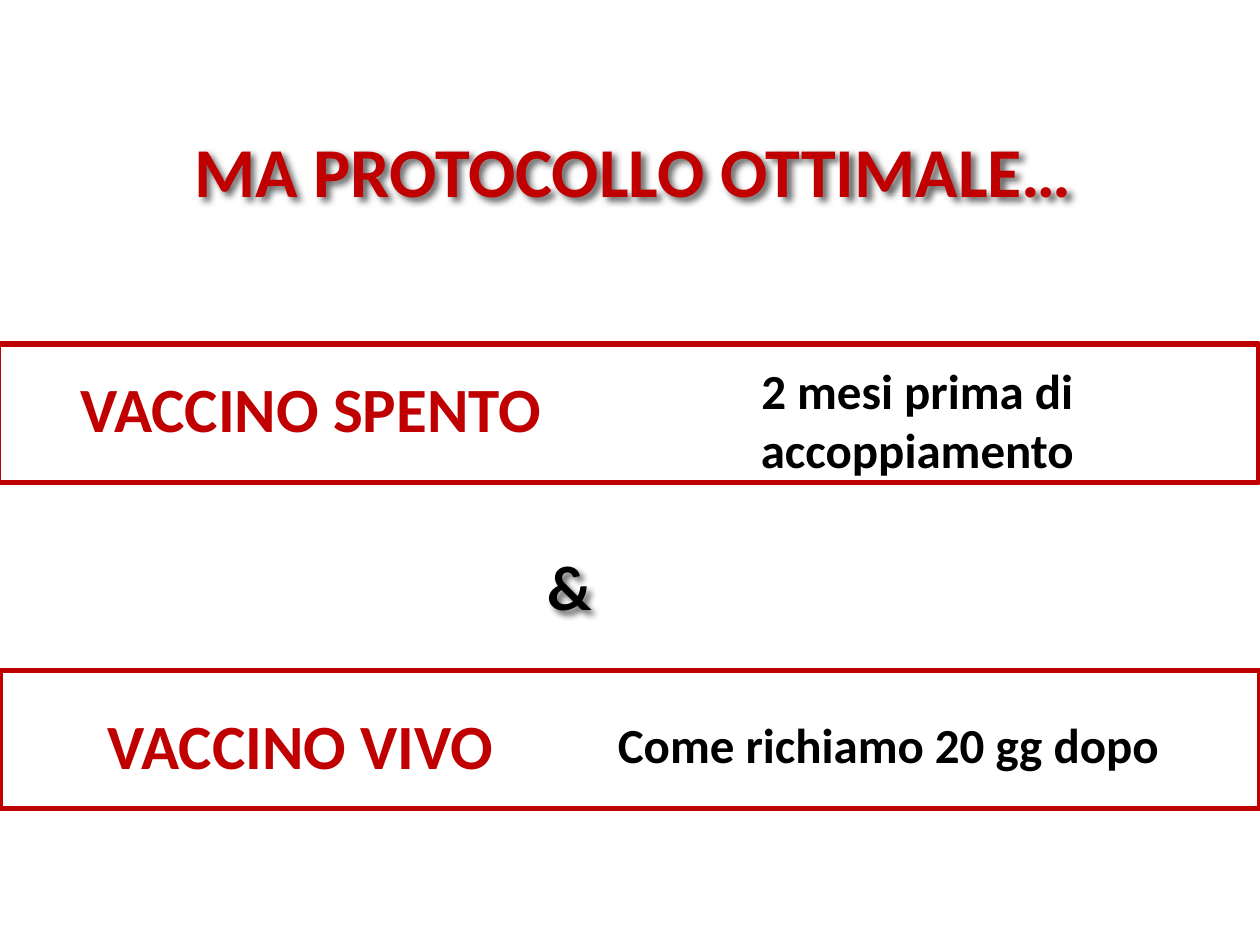
from dataclasses import dataclass

from lxml import etree
from pptx import Presentation
from pptx.dml.color import RGBColor
from pptx.enum.shapes import MSO_SHAPE
from pptx.enum.text import PP_ALIGN
from pptx.oxml import parse_xml
from pptx.util import Inches, Pt

WIDTH, HEIGHT = 10, 7.5
RED, BLACK = "C00000", "000000"
BAND_HEIGHT = 1.1
DRAWING_NS = "http://schemas.openxmlformats.org/drawingml/2006/main"


@dataclass(frozen=True)
class Area:
    left: float
    top: float
    width: float
    height: float

    def emu(self) -> tuple:
        return tuple(map(Inches, (self.left, self.top, self.width, self.height)))


@dataclass(frozen=True)
class Step:
    band_left: float
    band_top: float
    vaccine: str
    vaccine_area: Area
    timing: str
    timing_area: Area


STEPS = (
    Step(-0.01, 2.73, "VACCINO SPENTO", Area(0.52, 2.88, 3.89, 0.71),
         "2 mesi prima di accoppiamento", Area(4.76, 2.81, 5.04, 1.04)),
    Step(0, 5.32, "VACCINO VIVO", Area(0.74, 5.56, 3.29, 0.71),
         "Come richiamo 20 gg dopo", Area(4.53, 5.62, 5.04, 0.57)),
)


def color(value: str) -> RGBColor:
    return RGBColor.from_string(value)


def cast_shadow(shape) -> None:
    """Give an unfilled text box a soft shadow, which falls from its letters."""
    effects = etree.Element(f"{{{DRAWING_NS}}}effectLst", nsmap={"a": DRAWING_NS})
    shadow = etree.SubElement(
        effects, f"{{{DRAWING_NS}}}outerShdw", blurRad=str(Pt(4)),
        dist=str(Pt(3)), dir="2700000", algn="tl", rotWithShape="0")
    tint = etree.SubElement(shadow, f"{{{DRAWING_NS}}}srgbClr", val=BLACK)
    etree.SubElement(tint, f"{{{DRAWING_NS}}}alpha", val="60000")
    shape._element.spPr.append(parse_xml(etree.tostring(effects)))


def add_text(slide, area: Area, text: str, *, size: float, ink: str = BLACK,
             wrap: bool = True, shadow: bool = False) -> None:
    box = slide.shapes.add_textbox(*area.emu())
    box.text_frame.word_wrap = wrap
    paragraph = box.text_frame.paragraphs[0]
    paragraph.alignment = PP_ALIGN.CENTER
    run = paragraph.add_run()
    run.text = text
    run.font.name = "Calibri"
    run.font.size = Pt(size)
    run.font.bold = True
    run.font.color.rgb = color(ink)
    if shadow:
        cast_shadow(box)


def add_step(slide, step: Step) -> None:
    area = Area(step.band_left, step.band_top, WIDTH, BAND_HEIGHT)
    band = slide.shapes.add_shape(MSO_SHAPE.RECTANGLE, *area.emu())
    band.shadow.inherit = False
    band.fill.background()
    band.line.color.rgb = color(RED)
    band.line.width = Pt(3)
    add_text(slide, step.vaccine_area, step.vaccine, size=36, ink=RED, wrap=False)
    add_text(slide, step.timing_area, step.timing, size=28)


def main() -> None:
    deck = Presentation()
    deck.slide_width, deck.slide_height = Inches(WIDTH), Inches(HEIGHT)
    slide = deck.slides.add_slide(deck.slide_layouts[6])
    add_text(slide, Area(0.16, 0.96, 9.73, 0.77), "MA PROTOCOLLO OTTIMALE…",
             size=40, ink=RED, shadow=True)
    for step in STEPS:
        add_step(slide, step)
    add_text(slide, Area(3.74, 4.3, 1.57, 0.7), "&", size=36, shadow=True)
    deck.save("out.pptx")


if __name__ == "__main__":
    main()
